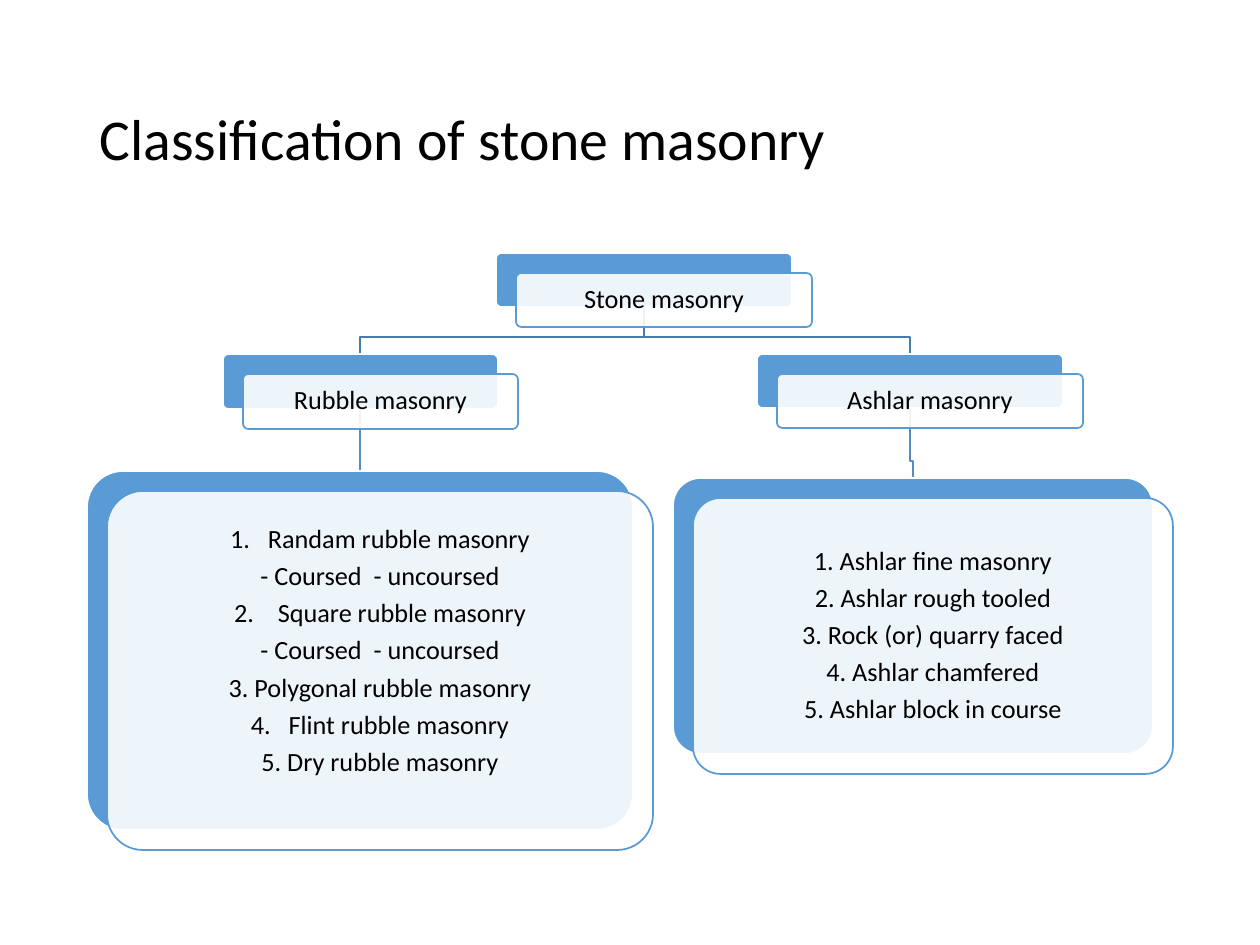
from collections import namedtuple

from lxml.etree import SubElement
from pptx import Presentation
from pptx.dml.color import RGBColor
from pptx.enum.shapes import MSO_CONNECTOR as Connector, MSO_SHAPE as Shape
from pptx.enum.text import MSO_ANCHOR as Anchor, MSO_AUTO_SIZE as AutoSize, PP_ALIGN as Align
from pptx.oxml.ns import qn
from pptx.util import Pt

SCALE = 914400 / 126
BLUE = RGBColor(0x5B, 0x9B, 0xD5)
UPPER_LINK = RGBColor(0x49, 0x7C, 0xAB)
LOWER_LINK = RGBColor(0x53, 0x8D, 0xC1)
WHITE = RGBColor(0xFF, 0xFF, 0xFF)
BLACK = RGBColor(0, 0, 0)
FONT = "Calibri"
CARD_OFFSET = 20
BEND_GAP = 17
INSET = 8

Box = namedtuple("Box", "left top width height")
Gap = namedtuple("Gap", "before after extra")

TITLE = Box(87, 50, 1086, 183)
ROOT = Box(496, 253, 296, 54)
RUBBLE = Box(223, 354, 275, 55)
ASHLAR = Box(757, 354, 306, 54)
RUBBLE_TYPES = Box(87, 471, 546, 359)
ASHLAR_TYPES = Box(673, 478, 480, 276)

COURSING = Gap("- Coursed", "- uncoursed", 340)
RUBBLE_LINES = [
    Gap("1.", "Randam rubble masonry", 680),
    COURSING,
    Gap("2.", "Square rubble masonry", 1020),
    COURSING,
    "3. Polygonal rubble masonry",
    Gap("4.", "Flint rubble masonry", 680),
    "5. Dry rubble masonry",
]
ASHLAR_LINES = [
    "1. Ashlar fine masonry",
    "2. Ashlar rough tooled",
    "3. Rock (or) quarry faced",
    "4. Ashlar chamfered",
    "5. Ashlar block in course",
]


def px(length):
    return round(length * SCALE)


def style_font(font, size):
    font.name = FONT
    font.size = Pt(size)
    font.color.rgb = BLACK


def add_title(slide, box):
    title = slide.shapes.title
    title.left, title.top, title.width, title.height = map(px, box)
    frame = title.text_frame
    frame.text = "Classification of stone masonry"
    frame.auto_size = AutoSize.NONE
    frame.vertical_anchor = Anchor.MIDDLE
    heading = frame.paragraphs[0]
    heading.alignment = Align.LEFT
    heading.line_spacing = 0.9
    style_font(heading.runs[0].font, 33)


def add_link(slide, parent, child, color):
    start_x, end_x = (box.left + box.width // 2 for box in (parent, child))
    start_y, end_y = parent.top + parent.height, child.top
    if start_x == end_x:
        link = slide.shapes.add_connector(
            Connector.STRAIGHT, px(start_x), px(start_y), px(end_x), px(end_y))
        SubElement(link._element.spPr, qn("a:effectLst"))
    else:
        bend = end_y - BEND_GAP
        builder = slide.shapes.build_freeform(start_x, start_y, scale=SCALE)
        builder.add_line_segments(
            [(start_x, bend), (end_x, bend), (end_x, end_y)], close=False)
        link = builder.convert_to_shape()
        link.fill.background()
        link.shadow.inherit = False
    link.line.color.rgb = color
    link.line.width = Pt(1)


def add_panel(slide, box, fill, outline):
    panel = slide.shapes.add_shape(Shape.ROUNDED_RECTANGLE, *map(px, box))
    panel.adjustments[0] = 0.1
    panel.shadow.inherit = False
    panel.fill.solid()
    panel.fill.fore_color.rgb = fill
    panel.line.color.rgb = outline
    panel.line.width = Pt(1)
    return panel


def write_line(paragraph, line):
    if isinstance(line, Gap):
        for part in (line.before, " ", line.after):
            run = paragraph.add_run()
            run.text = part
            if part == " ":
                run._r.get_or_add_rPr().set("spc", str(line.extra))
    else:
        paragraph.text = line
    paragraph.alignment = Align.CENTER
    paragraph.line_spacing = 0.9
    paragraph.space_after = Pt(5)
    for run in paragraph.runs:
        style_font(run.font, 15)


def add_card(slide, box, lines, space_below=0):
    add_panel(slide, box, BLUE, WHITE)
    front_box = box._replace(left=box.left + CARD_OFFSET, top=box.top + CARD_OFFSET)
    front = add_panel(slide, front_box, WHITE, BLUE)
    color = front.fill._xPr.find(qn("a:solidFill"))[0]
    SubElement(color, qn("a:alpha"), val="90000")
    frame = front.text_frame
    frame.word_wrap = True
    frame.vertical_anchor = Anchor.MIDDLE
    frame.margin_left = frame.margin_right = frame.margin_top = px(INSET)
    frame.margin_bottom = px(INSET + space_below)
    for index, line in enumerate(lines):
        write_line(frame.add_paragraph() if index else frame.paragraphs[0], line)


def add_hierarchy(slide):
    add_link(slide, ASHLAR, ASHLAR_TYPES, LOWER_LINK)
    add_link(slide, ROOT, ASHLAR, UPPER_LINK)
    add_link(slide, RUBBLE, RUBBLE_TYPES, LOWER_LINK)
    add_link(slide, ROOT, RUBBLE, UPPER_LINK)
    add_card(slide, ROOT, ["Stone masonry"])
    add_card(slide, RUBBLE, ["Rubble masonry"])
    add_card(slide, RUBBLE_TYPES, RUBBLE_LINES, space_below=38)
    add_card(slide, ASHLAR, ["Ashlar masonry"])
    add_card(slide, ASHLAR_TYPES, ASHLAR_LINES)


def main():
    deck = Presentation()
    deck.slide_width, deck.slide_height = px(1260), px(945)
    slide = deck.slides.add_slide(deck.slide_layouts[5])
    add_title(slide, TITLE)
    add_hierarchy(slide)
    deck.save("out.pptx")


if __name__ == "__main__":
    main()
